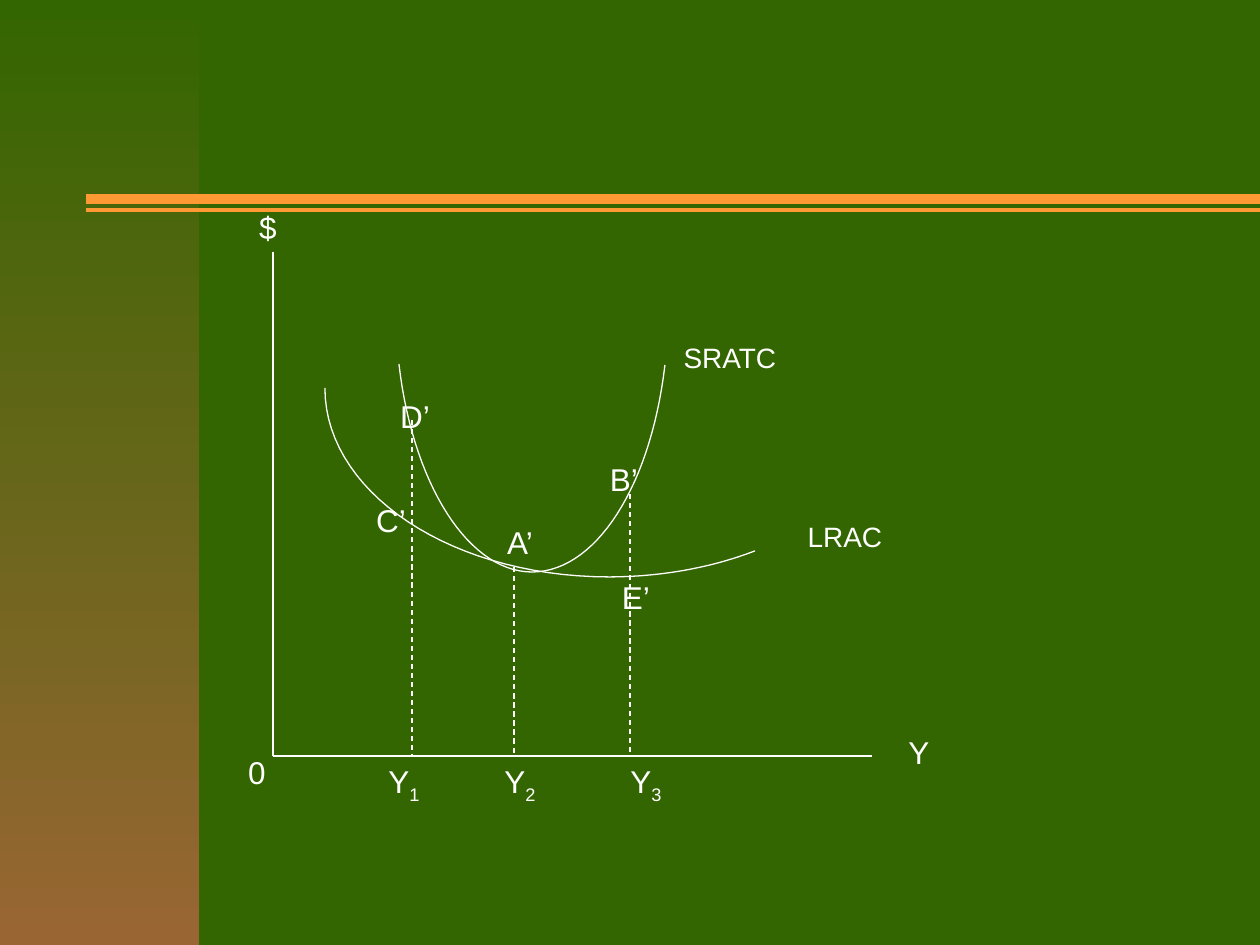
"""Build the slide of short-run and long-run average cost curves."""
from lxml.etree import SubElement
from pptx import Presentation
from pptx.dml.color import RGBColor
from pptx.enum.dml import MSO_LINE
from pptx.enum.shapes import MSO_CONNECTOR, MSO_SHAPE
from pptx.enum.text import MSO_ANCHOR, PP_ALIGN
from pptx.oxml.ns import qn
from pptx.util import Pt

PX = 914400 // 126
WIDTH, HEIGHT = 1260, 945
COLORS = {"background": "336600", "band": "996633", "rule": "FF9933", "ink": "FFFFFF"}
FONT = "Arial"
BAND_WIDTH = 199
RULE_LEFT = 86
RULES = [(210, 2), (199, 6)]
ORIGIN_X, ORIGIN_Y = 273, 756
AXIS_TOP, AXIS_RIGHT = 252, 872
OUTPUT_DROPS = [(412, 420), (514, 567), (630, 494)]
CURVES = {
    "LRAC": [(755, 551), (711, 568), (660, 577), (609, 577),
             (452, 577), (325, 493), (325, 388)],
    "SRATC": [(665, 365), (651, 486), (596, 572), (532, 572),
              (469, 572), (413, 485), (399, 364)],
}
CURVE_STEPS = 30
CURVE_LABELS = [("LRAC", "", 845, 536), ("SRATC", "", 730, 357)]
POINT_LABELS = [
    ("$", "", 268, 226), ("Y", "", 919, 751), ("0", "", 257, 771),
    ("Y", "1", 404, 783), ("Y", "2", 520, 783), ("Y", "3", 646, 783),
    ("A’", "", 520, 541), ("B’", "", 624, 478), ("C’", "", 391, 519),
    ("D’", "", 415, 415), ("E’", "", 636, 596),
]
LABEL_STYLES = [(CURVE_LABELS, 242, 126, 16), (POINT_LABELS, 94, 73, 18)]


def rgb(name):
    return RGBColor.from_string(COLORS[name])


def add_band(slide):
    band = slide.shapes.add_shape(MSO_SHAPE.RECTANGLE, 0, 0, BAND_WIDTH * PX, HEIGHT * PX)
    band.shadow.inherit = False
    band.line.fill.background()
    band.fill.gradient()
    band.fill.gradient_angle = 270
    for stop, name in zip(band.fill.gradient_stops, ("background", "band")):
        stop.color.rgb = rgb(name)


def add_line(slide, start, end, color="ink", weight=0.75, dashed=False):
    ends = [value * PX for value in (*start, *end)]
    connector = slide.shapes.add_connector(MSO_CONNECTOR.STRAIGHT, *ends)
    connector.line.color.rgb = rgb(color)
    connector.line.width = Pt(weight)
    if dashed:
        connector.line.dash_style = MSO_LINE.DASH
    SubElement(connector._element.spPr, qn("a:effectLst"))


def bezier_points(controls):
    for step in range(1, CURVE_STEPS + 1):
        t = step / CURVE_STEPS
        weights = ((1 - t) ** 3, 3 * t * (1 - t) ** 2, 3 * t * t * (1 - t), t ** 3)
        yield tuple(sum(w * value for w, value in zip(weights, axis)) * PX
                    for axis in zip(*controls))


def add_curve(slide, controls):
    start_x, start_y = controls[0]
    builder = slide.shapes.build_freeform(start_x * PX, start_y * PX)
    for first in range(0, len(controls) - 1, 3):
        builder.add_line_segments(bezier_points(controls[first:first + 4]), close=False)
    curve = builder.convert_to_shape()
    curve.shadow.inherit = False
    curve.fill.background()
    curve.line.color.rgb = rgb("ink")
    curve.line.width = Pt(0.75)


def add_label(slide, text, subscript, center_x, center_y, width, height, size):
    label = slide.shapes.add_textbox((center_x - width // 2) * PX, (center_y - height // 2) * PX,
                                     width * PX, height * PX)
    frame = label.text_frame
    frame.word_wrap = False
    frame.vertical_anchor = MSO_ANCHOR.MIDDLE
    paragraph = frame.paragraphs[0]
    paragraph.alignment = PP_ALIGN.CENTER
    paragraph.font.name = FONT
    paragraph.font.size = Pt(size)
    paragraph.font.color.rgb = rgb("ink")
    paragraph.add_run().text = text
    if subscript:
        index = paragraph.add_run()
        index.text = subscript
        index.font._element.set("baseline", "-25000")


def main():
    deck = Presentation()
    deck.slide_width, deck.slide_height = WIDTH * PX, HEIGHT * PX
    slide = deck.slides.add_slide(deck.slide_layouts[6])
    slide.background.fill.solid()
    slide.background.fill.fore_color.rgb = rgb("background")

    add_band(slide)
    for y, weight in RULES:
        add_line(slide, (RULE_LEFT, y), (WIDTH, y), "rule", weight)
    add_line(slide, (ORIGIN_X, AXIS_TOP), (ORIGIN_X, ORIGIN_Y))
    add_line(slide, (ORIGIN_X, ORIGIN_Y), (AXIS_RIGHT, ORIGIN_Y))
    for controls in CURVES.values():
        add_curve(slide, controls)
    for x, top in OUTPUT_DROPS:
        add_line(slide, (x, top), (x, ORIGIN_Y), dashed=True)
    for labels, width, height, size in LABEL_STYLES:
        for label in labels:
            add_label(slide, *label, width, height, size)

    deck.save("out.pptx")


if __name__ == "__main__":
    main()
